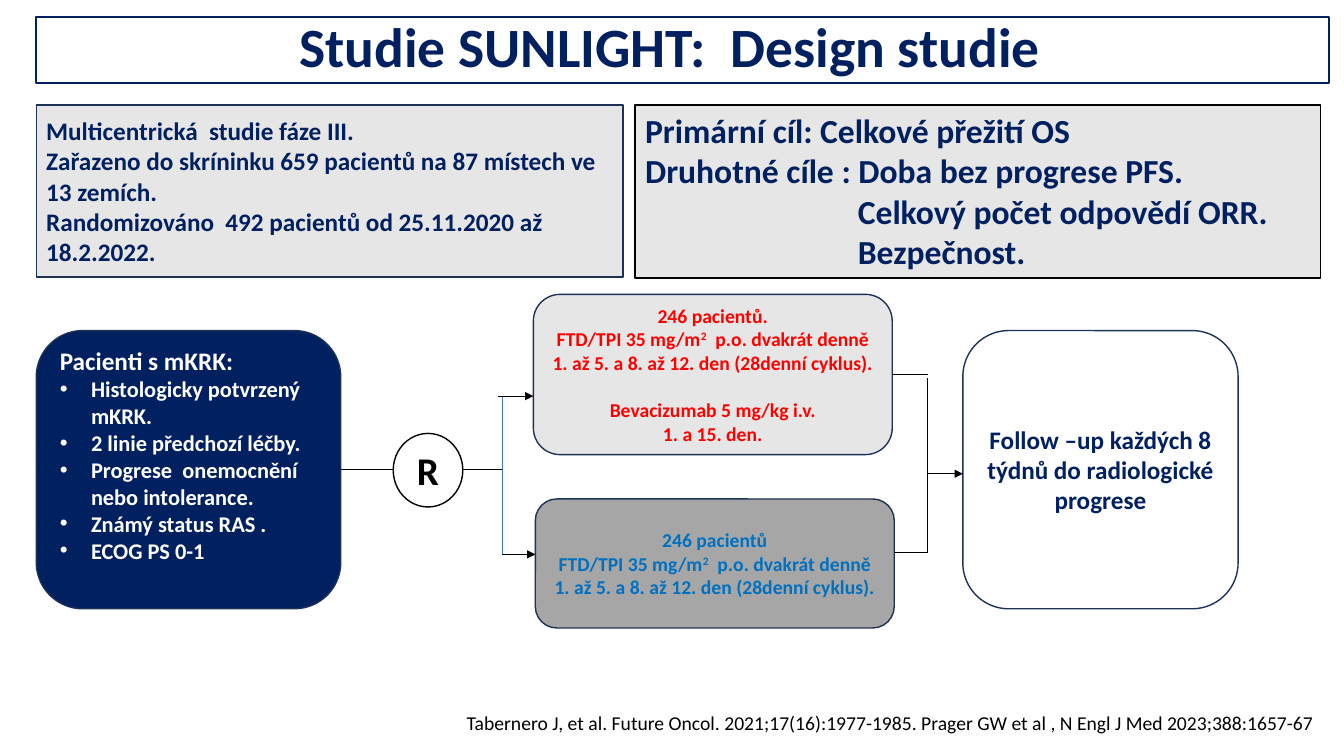
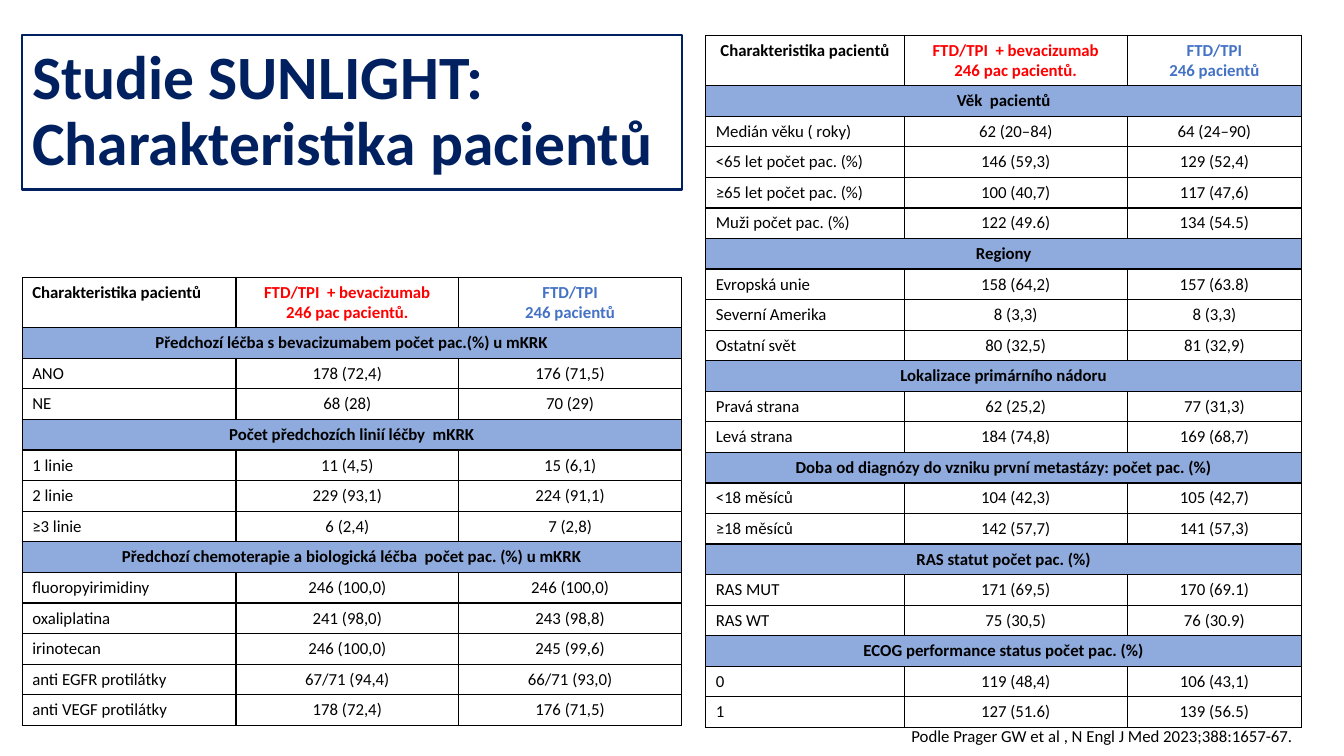
from dataclasses import dataclass

from pptx import Presentation
from pptx.dml.color import RGBColor
from pptx.enum.shapes import MSO_CONNECTOR, MSO_SHAPE as SHAPE
from pptx.enum.text import MSO_ANCHOR as ANCHOR, MSO_AUTO_SIZE, PP_ALIGN as ALIGN
from pptx.oxml import parse_xml
from pptx.oxml.ns import nsdecls
from pptx.oxml.xmlchemy import OxmlElement
from pptx.util import Pt

PX = 9144  # EMU per px, 100 px to the inch


@dataclass(frozen=True)
class Theme:
    font: str = "Calibri"
    navy: str = "002060"
    outline: str = "1E3256"
    black: str = "000000"
    white: str = "FFFFFF"
    pale: str = "E7E6E6"
    grey: str = "A6A6A6"
    red: str = "FF0000"
    blue: str = "0070C0"
    accent: str = "4472C4"
    band: str = "8FAADC"
    design_title: float = 39.6
    table_title: int = 44
    letter: int = 28
    goals: int = 24
    body: int = 18
    bullet: int = 16
    arm: int = 14
    cell: int = 12


T = Theme()


def write(tf, lines, size, color, bold=False, align=ALIGN.LEFT):
    """Fill a text frame, one paragraph a line; ^ marks enclose superscript, a newline breaks the line."""
    tf.word_wrap = True
    for i, line in enumerate(lines):
        p = tf.paragraphs[0] if i == 0 else tf.add_paragraph()
        p.alignment = align
        for j, part in enumerate(line.split("^")):
            for k, text in enumerate(part.split("\n")):
                if k:
                    p.add_line_break()
                r = p.add_run()
                r.text = text
                for key, value in dict(name=T.font, size=Pt(size), bold=bold).items():
                    setattr(r.font, key, value)
                r.font.color.rgb = RGBColor.from_string(color)
                if j % 2:
                    r.font._element.set("baseline", "30000")


prs = Presentation()
prs.slide_width, prs.slide_height = 1333 * PX, 750 * PX

# Titles and source notes
slides = []
for title, at, size, align, right_inset, source, source_at, source_size in [
    ("Studie SUNLIGHT:  Design studie", (36, 17, 1282, 65), T.design_title, ALIGN.CENTER, 35,
     "Tabernero J, et al. Future Oncol. 2021;17(16):1977-1985. "
     "Prager GW et al , N Engl J Med 2023;388:1657-67", (453, 700, 865, 34), T.arm),
    ("Studie SUNLIGHT:\nCharakteristika pacientů", (22, 35, 654, 153), T.table_title, ALIGN.LEFT, 10,
     "Podle Prager GW et al , N Engl J Med 2023;388:1657-67.", (894, 715, 418, 30), T.cell),
]:
    s = prs.slides.add_slide(prs.slide_layouts[5])
    sp = s.shapes.title
    sp.left, sp.top, sp.width, sp.height = (v * PX for v in at)
    sp.line.color.rgb = RGBColor.from_string(T.navy)
    sp.line.width = Pt(1.5)
    tf = sp.text_frame
    tf.auto_size = MSO_AUTO_SIZE.NONE
    tf.vertical_anchor = ANCHOR.MIDDLE
    tf.margin_right = right_inset * PX
    tf.paragraphs[0].line_spacing = 0.9
    write(tf, [title], size, T.navy, True, align)
    note = s.shapes.add_textbox(*(v * PX for v in source_at))
    write(note.text_frame, [source], source_size, T.black)
    slides.append(s)
design, characteristics = slides

# Study design: boxes
dosing = "FTD/TPI 35 mg/m^2^  p.o. dvakrát denně 1. až 5. a 8. až 12. den (28denní cyklus)."
boxes = {}
for name, kind, at, fill, line, size, color, align, lines in [
    ("study", SHAPE.RECTANGLE, (36, 104, 582, 171), T.pale, T.outline, T.body, T.navy, ALIGN.LEFT,
     ["Multicentrická  studie fáze III.",
      "Zařazeno do skríninku 659 pacientů na 87 místech ve 13 zemích.",
      "Randomizováno  492 pacientů od 25.11.2020 až 18.2.2022."]),
    ("goals", SHAPE.RECTANGLE, (630, 104, 680, 172), T.pale, T.black, T.goals, T.navy, ALIGN.LEFT,
     ["Primární cíl: Celkové přežití OS", "Druhotné cíle : Doba bez progrese PFS.",
      "Celkový počet odpovědí ORR.", "Bezpečnost."]),
    ("patients", SHAPE.ROUNDED_RECTANGLE, (36, 328, 302, 276), T.navy, T.outline, T.bullet, T.white, ALIGN.LEFT,
     ["Pacienti s mKRK:", "Histologicky potvrzený mKRK.", "2 linie předchozí léčby.",
      "Progrese  onemocnění nebo intolerance.", "Známý status RAS .", "ECOG PS 0-1"]),
    ("combination", SHAPE.ROUNDED_RECTANGLE, (529, 292, 356, 159), T.pale, T.outline, T.arm, T.red, ALIGN.CENTER,
     ["246 pacientů.", dosing, "Bevacizumab 5 mg/kg i.v.", "1. a 15. den."]),
    ("single", SHAPE.ROUNDED_RECTANGLE, (531, 495, 356, 128), T.grey, T.outline, T.arm, T.blue, ALIGN.CENTER,
     ["246 pacientů", dosing]),
    ("follow_up", SHAPE.ROUNDED_RECTANGLE, (955, 328, 273, 276), None, T.outline, T.body, T.navy, ALIGN.CENTER,
     ["Follow –up každých 8 týdnů do radiologické progrese"]),
    ("randomisation", SHAPE.OVAL, (390, 430, 69, 73), T.white, T.black, T.letter, T.black, ALIGN.CENTER, ["R"]),
]:
    sp = design.shapes.add_shape(kind, *(v * PX for v in at))
    sp.shadow.inherit = False
    if fill:
        sp.fill.solid()
        sp.fill.fore_color.rgb = RGBColor.from_string(fill)
    else:
        sp.fill.background()
    sp.line.color.rgb = RGBColor.from_string(line)
    sp.line.width = Pt(1)
    sp.text_frame.vertical_anchor = ANCHOR.MIDDLE
    write(sp.text_frame, lines, size, color, True, align)
    boxes[name] = sp

tf = boxes["goals"].text_frame
tf.vertical_anchor = ANCHOR.TOP
for p in tf.paragraphs[2:]:
    p._p.get_or_add_pPr().set("marL", str(211 * PX))

tf = boxes["patients"].text_frame
tf.margin_bottom = 35 * PX
tf.paragraphs[0].runs[0].font.size = Pt(T.body)
for p in tf.paragraphs[1:]:
    pPr = p._p.get_or_add_pPr()
    pPr.set("marL", str(31 * PX))
    pPr.set("indent", str(-31 * PX))
    pPr.append(parse_xml(f'<a:buFont {nsdecls("a")} typeface="Arial"/>'))
    pPr.append(parse_xml(f'<a:buChar {nsdecls("a")} char="•"/>'))

boxes["combination"].text_frame.paragraphs[2].space_before = Pt(17)

# Study design: flow lines
for x1, y1, x2, y2, color, arrow, start in [
    (338, 466, 390, 466, T.black, False, "patients"),
    (459, 466, 498, 466, T.black, False, None),
    (498, 393, 498, 550, T.accent, False, None),
    (494, 393, 529, 393, T.black, True, None),
    (498, 550, 531, 550, T.black, True, None),
    (885, 372, 920, 372, T.black, False, "combination"),
    (920, 375, 920, 549, T.black, False, None),
    (887, 548, 920, 548, T.black, False, None),
    (920, 470, 955, 470, T.black, True, None),
]:
    line = design.shapes.add_connector(MSO_CONNECTOR.STRAIGHT, *(v * PX for v in (x1, y1, x2, y2)))
    if start:
        line.begin_connect(boxes[start], 3)
        line.end_y = line.begin_y
    line.line.color.rgb = RGBColor.from_string(color)
    line.line.width = Pt(0.5)
    if arrow:
        line.line._get_or_add_ln().append(parse_xml(f'<a:tailEnd {nsdecls("a")} type="triangle"/>'))
    line._element.spPr.append(OxmlElement("a:effectLst"))

# Patient characteristics: a row with one entry is a section band
age_to_ecog = [
    ["Věk  pacientů"],
    ["Medián věku ( roky)", "62 (20–84)", "64 (24–90)"],
    ["<65 let počet pac. (%)", "146 (59,3)", "129 (52,4)"],
    ["≥65 let počet pac. (%)", "100 (40,7)", "117 (47,6)"],
    ["Muži počet pac. (%)", "122 (49.6)", "134 (54.5)"],
    ["Regiony"],
    ["Evropská unie", "158 (64,2)", "157 (63.8)"],
    ["Severní Amerika", "8 (3,3)", "8 (3,3)"],
    ["Ostatní svět", "80 (32,5)", "81 (32,9)"],
    ["Lokalizace primárního nádoru"],
    ["Pravá strana", "62 (25,2)", "77 (31,3)"],
    ["Levá strana", "184 (74,8)", "169 (68,7)"],
    ["Doba od diagnózy do vzniku první metastázy: počet pac. (%)"],
    ["<18 měsíců", "104 (42,3)", "105 (42,7)"],
    ["≥18 měsíců", "142 (57,7)", "141 (57,3)"],
    ["RAS statut počet pac. (%)"],
    ["RAS MUT", "171 (69,5)", "170 (69.1)"],
    ["RAS WT", "75 (30,5)", "76 (30.9)"],
    ["ECOG performance status počet pac. (%)"],
    ["0", "119 (48,4)", "106 (43,1)"],
    ["1", "127 (51.6)", "139 (56.5)"],
]
prior_treatment = [
    ["Předchozí léčba s bevacizumabem počet pac.(%) u mKRK"],
    ["ANO", "178 (72,4)", "176 (71,5)"],
    ["NE", "68 (28)", "70 (29)"],
    ["Počet předchozích linií léčby  mKRK"],
    ["1 linie", "11 (4,5)", "15 (6,1)"],
    ["2 linie", "229 (93,1)", "224 (91,1)"],
    ["≥3 linie", "6 (2,4)", "7 (2,8)"],
    ["Předchozí chemoterapie a biologická léčba  počet pac. (%) u mKRK"],
    ["fluoropyirimidiny", "246 (100,0)", "246 (100,0)"],
    ["oxaliplatina", "241 (98,0)", "243 (98,8)"],
    ["irinotecan", "246 (100,0)", "245 (99,6)"],
    ["anti EGFR protilátky", "67/71 (94,4)", "66/71 (93,0)"],
    ["anti VEGF protilátky", "178 (72,4)", "176 (71,5)"],
]
header = ["Charakteristika pacientů", "FTD/TPI  + bevacizumab\n246 pac pacientů.", "FTD/TPI\n246 pacientů"]
header_colors = [T.black, T.red, T.accent]
HEADER_H = 50

for left, top, widths, height, first_align, rows in [
    (700, 35, (197, 221, 173), 687, ALIGN.CENTER, age_to_ecog),
    (22, 275, (212, 221, 221), 445, ALIGN.LEFT, prior_treatment),
]:
    row_height = (height - HEADER_H) * PX // len(rows)
    frame = characteristics.shapes.add_table(
        len(rows) + 1, 3, *(v * PX for v in (left, top, sum(widths), height)))
    table = frame.table
    table.first_row = table.horz_banding = False
    for column, width in zip(table.columns, widths):
        column.width = width * PX
    for i, row in enumerate([header] + rows):
        table.rows[i].height = row_height if i else HEADER_H * PX
        is_band = len(row) == 1
        for j in range(3):
            cell = table.cell(i, j)
            tcPr = cell._tc.get_or_add_tcPr()
            for side in "LRTB":
                tcPr.append(parse_xml(
                    f'<a:ln{side} {nsdecls("a")} w="{Pt(1)}"><a:solidFill>'
                    f'<a:srgbClr val="{T.black}"/></a:solidFill></a:ln{side}>'))
            cell.fill.solid()
            cell.fill.fore_color.rgb = RGBColor.from_string(T.band if is_band else T.white)
        if is_band:
            table.cell(i, 0).merge(table.cell(i, 2))
        for j, text in enumerate(row):
            if i == 0 and j == 0:
                align = first_align
            else:
                align = ALIGN.CENTER if is_band or j else ALIGN.LEFT
            color = T.black if i else header_colors[j]
            write(table.cell(i, j).text_frame, text.split("\n"), T.cell, color, is_band or i == 0, align)

prs.save("out.pptx")
